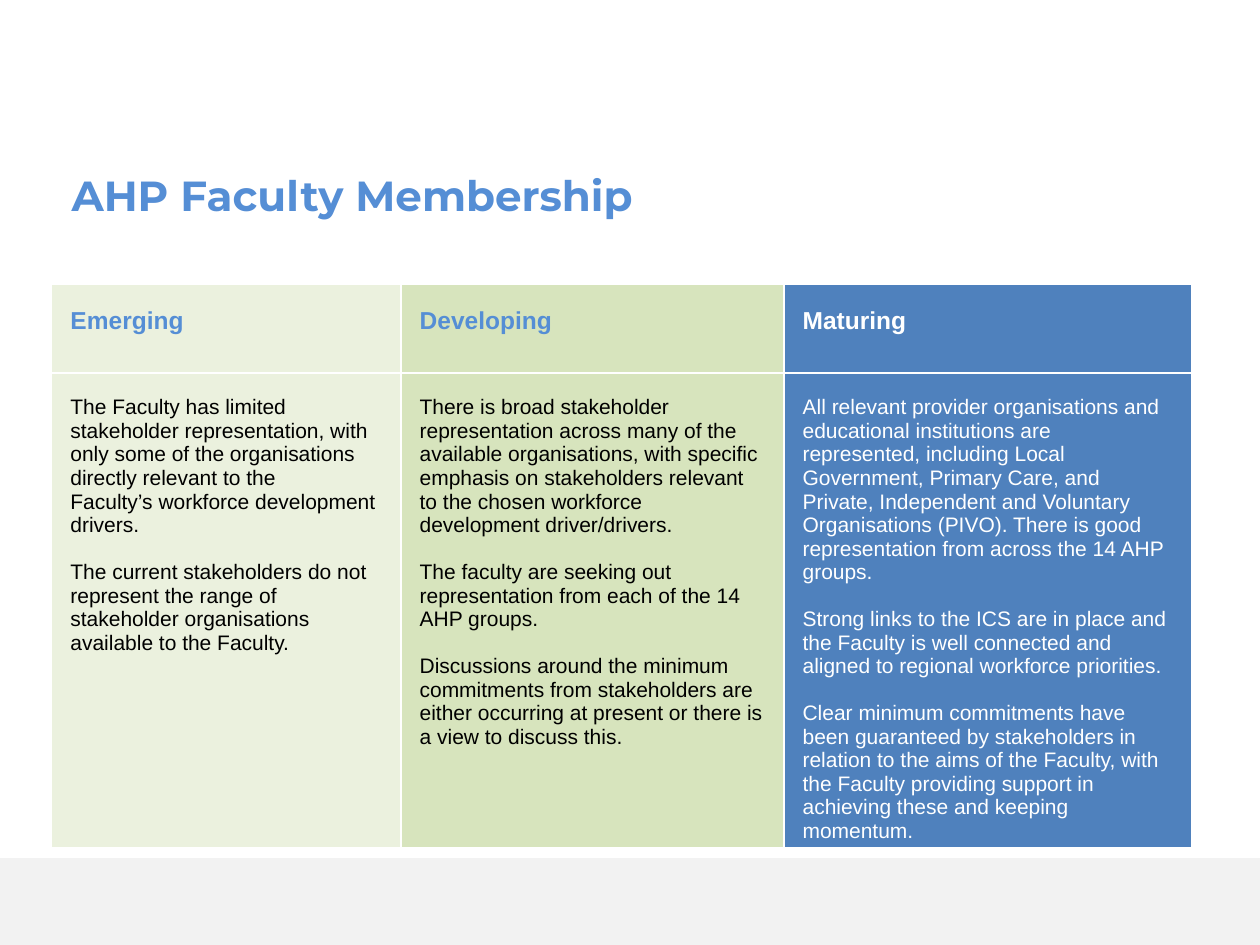
import dataclasses

import pptx
import pptx.dml.color
import pptx.enum.shapes
import pptx.enum.text
import pptx.oxml.ns
import pptx.util
import lxml.etree

Cm = pptx.util.Cm
Pt = pptx.util.Pt


@dataclasses.dataclass(frozen=True)
class Theme:
    blue: str = "558ED5"
    white: str = "FFFFFF"
    black: str = "000000"
    grey: str = "F2F2F2"
    pale: str = "EBF1DE"
    green: str = "D7E4BD"
    deep: str = "4F81BD"
    head: str = "Montserrat"
    body: str = "Arial"
    title: float = 24
    label: float = 14
    text: float = 12
    gap: float = 13.5


def rgb(code):
    return pptx.dml.color.RGBColor.from_string(code)


class Deck:
    def __init__(self, theme):
        self.theme = theme
        self.show = pptx.Presentation()
        self.show.slide_width, self.show.slide_height = Cm(25.4), Cm(19.05)
        self.slide = self.show.slides.add_slide(self.show.slide_layouts[5])

    def style(self, para, font, size, color, bold=False):
        para.alignment = pptx.enum.text.PP_ALIGN.LEFT
        for run in para.runs:
            run.font.name, run.font.size = font, Pt(size)
            run.font.bold = bold
            run.font.color.rgb = rgb(color)

    def title(self, text, box):
        shape = self.slide.shapes.title
        shape.left, shape.top, shape.width, shape.height = map(Cm, box)
        frame = shape.text_frame
        frame.text = text
        frame.word_wrap = False
        frame.vertical_anchor = pptx.enum.text.MSO_ANCHOR.TOP
        t = self.theme
        self.style(frame.paragraphs[0], t.head, t.title, t.blue, True)

    def bar(self, box, color):
        kind = pptx.enum.shapes.MSO_SHAPE.RECTANGLE
        shape = self.slide.shapes.add_shape(kind, *map(Cm, box))
        shape.shadow.inherit = False
        shape.fill.solid()
        shape.fill.fore_color.rgb = rgb(color)
        shape.line.fill.background()

    def edge(self, cell):
        props = cell._tc.get_or_add_tcPr()
        qn = pptx.oxml.ns.qn
        for side in ("lnL", "lnR", "lnT", "lnB"):
            line = lxml.etree.SubElement(props, qn("a:" + side), w=str(Pt(1)))
            fill = lxml.etree.SubElement(line, qn("a:solidFill"))
            lxml.etree.SubElement(fill, qn("a:srgbClr"), val=self.theme.white)

    def cell(self, cell, paras, fill, size, color, bold=False):
        self.edge(cell)
        cell.fill.solid()
        cell.fill.fore_color.rgb = rgb(fill)
        cell.margin_left = cell.margin_right = Cm(0.38)
        cell.margin_top, cell.margin_bottom = Cm(0.46), Cm(0.1)
        frame = cell.text_frame
        for num, text in enumerate(paras):
            para = frame.add_paragraph() if num else frame.paragraphs[0]
            para.text = text
            if num:
                para.space_before = Pt(self.theme.gap)
            self.style(para, self.theme.body, size, color, bold)

    def table(self, left, top, wides, highs, stages):
        box = map(Cm, (left, top, sum(wides), sum(highs)))
        grid = self.slide.shapes.add_table(len(highs), len(wides), *box).table
        grid.first_row = grid.horz_banding = False
        for row, high in zip(grid.rows, highs):
            row.height = Cm(high)
        t = self.theme
        for col, (wide, stage) in enumerate(zip(wides, stages)):
            name, fill, ink, tone, paras = stage
            grid.columns[col].width = Cm(wide)
            self.cell(grid.cell(0, col), [name], fill, t.label, ink, True)
            self.cell(grid.cell(1, col), paras, fill, t.text, tone)


def main():
    theme = Theme()
    deck = Deck(theme)

    # Footer band and title
    deck.bar((0, 17.3, 25.4, 1.75), theme.grey)
    deck.title("AHP Faculty Membership", (1.19, 3.28, 12.24, 1.27))

    # Stages: name, fill, heading colour, text colour, paragraphs
    stages = [
        ("Emerging", theme.pale, theme.blue, theme.black, [
            "The Faculty has limited stakeholder representation, with only "
            "some of the organisations directly relevant to the\v"
            "Faculty’s workforce development drivers.",
            "The current stakeholders do not represent the range of "
            "stakeholder organisations available to the Faculty.",
        ]),
        ("Developing", theme.green, theme.blue, theme.black, [
            "There is broad stakeholder representation across many of the "
            "available organisations, with specific emphasis on "
            "stakeholders relevant to the chosen workforce development "
            "driver/drivers.",
            "The faculty are seeking out representation from each of the "
            "14 AHP groups.",
            "Discussions around the minimum commitments from stakeholders "
            "are either occurring at present or there is a view to discuss "
            "this.",
        ]),
        ("Maturing", theme.deep, theme.white, theme.white, [
            "All relevant provider organisations and educational "
            "institutions are represented, including Local Government, "
            "Primary Care, and Private, Independent and Voluntary "
            "Organisations (PIVO). There is good representation from across "
            "the 14 AHP groups.",
            "Strong links to the ICS are in place and the Faculty is well "
            "connected and aligned to regional workforce priorities.",
            "Clear minimum commitments have\vbeen guaranteed by "
            "stakeholders in relation to the aims of the Faculty, with the "
            "Faculty providing support in achieving these and keeping "
            "momentum.",
        ]),
    ]

    # Membership table
    deck.table(1.04, 5.74, (7.04, 7.72, 8.23), (1.78, 9.52), stages)
    deck.show.save("out.pptx")


if __name__ == "__main__":
    main()
